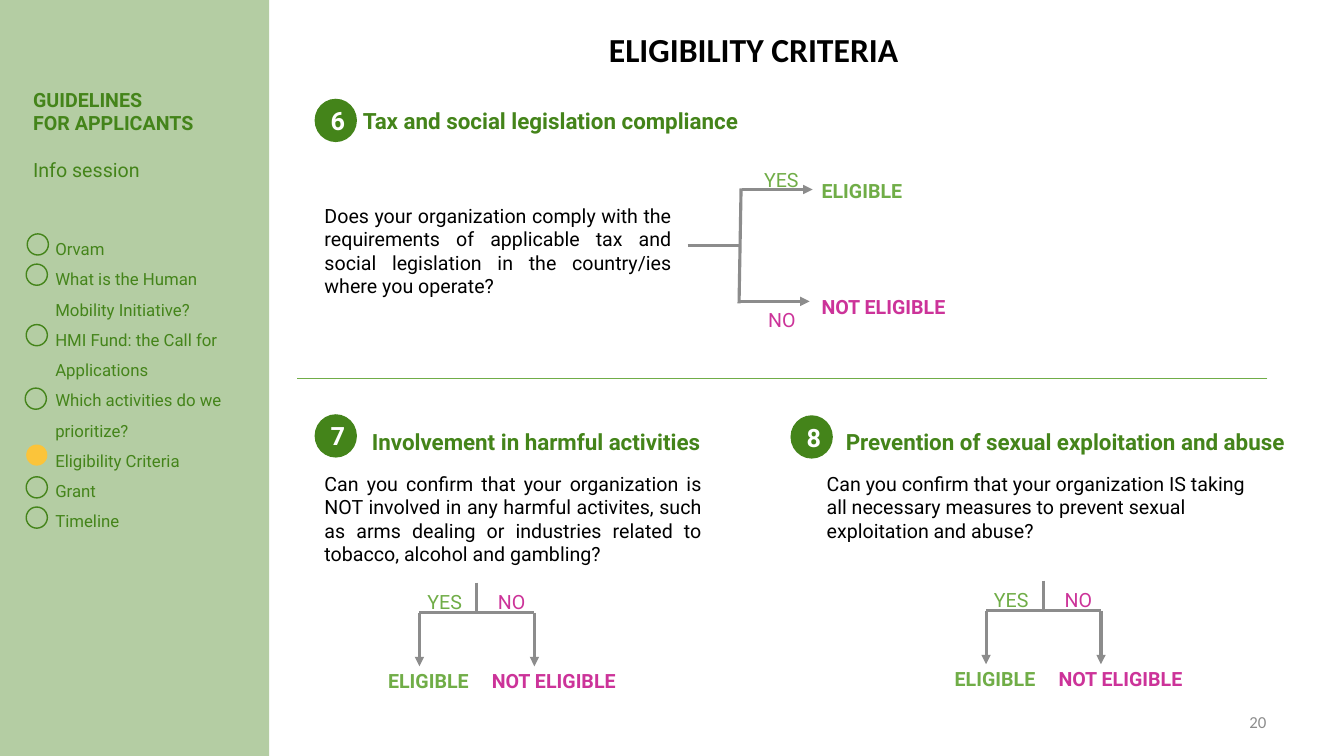
from lxml import etree
from pptx import Presentation
from pptx.dml.color import RGBColor
from pptx.enum.shapes import MSO_CONNECTOR as CONN, MSO_SHAPE as SHAPE
from pptx.enum.text import MSO_ANCHOR as ANCHOR, MSO_AUTO_SIZE as FIT, PP_ALIGN as ALIGN
from pptx.oxml.ns import qn
from pptx.util import Inches, Pt

GREEN, LIME, PINK = "44841A", "70AD47", "CC3399"
GREY, BLACK, WHITE, YELLOW = "8C8C8C", "000000", "FFFFFF", "FBC43A"

# Content
TITLE = "ELIGIBILITY CRITERIA"
PAGE = "20"
GUIDE = ["GUIDELINES\u00a0", "FOR APPLICANTS", "Info session"]
# Agenda: text, marker left, marker top, is current
AGENDA = [
    ("Orvam", 0.27, 2.32, False),
    ("What is the Human Mobility Initiative?", 0.26, 2.62, False),
    ("HMI Fund: the Call for Applications", 0.26, 3.22, False),
    ("Which activities do we prioritize?", 0.25, 3.85, False),
    ("Eligibility Criteria", 0.26, 4.41, True),
    ("Grant", 0.26, 4.73, False),
    ("Timeline", 0.26, 5.03, False),
]
# Criteria: number, badge position, heading, heading box, question, question box, alignment
CRITERIA = [
    ("6", (3.12, 0.98), "Tax and social legislation compliance", (3.5, 1.01, 4.29, 0.37),
     "Does your organization comply with the requirements of applicable tax and "
     "social legislation in the country/ies where you operate?",
     (3.12, 1.97, 3.64, 1.04), ALIGN.JUSTIFY),
    ("7", (3.12, 4.11), "Involvement in harmful activities", (3.59, 4.2, 3.78, 0.37),
     "Can you confirm that your organization is NOT involved in any harmful activites, "
     "such as arms dealing or industries related to tobacco, alcohol and gambling?",
     (3.12, 4.63, 3.94, 1.04), ALIGN.JUSTIFY),
    ("8", (7.84, 4.12), "Prevention of sexual exploitation and abuse", (8.29, 4.2, 4.99, 0.37),
     "Can you confirm that your organization IS taking all necessary measures to "
     "prevent sexual exploitation and abuse?",
     (8.1, 4.63, 4.59, 0.81), ALIGN.LEFT),
]
# Labels: text, width, colour, bold
LABELS = {
    "yes": ("YES", 0.55, LIME, False),
    "no": ("NO", 0.48, PINK, False),
    "pass": ("ELIGIBLE", 1.12, LIME, True),
    "fail": ("NOT ELIGIBLE", 1.61, PINK, True),
}
SIDE_LABELS = [("yes", 7.48, 1.62), ("no", 7.52, 3.01), ("pass", 8.05, 1.73), ("fail", 8.05, 2.88)]
# Side tree lines: start, end, has arrow
SIDE_LINES = [
    ((7.33, 2.99), (8.03, 2.99), True),
    ((7.35, 1.87), (7.33, 3.01), False),
    ((7.36, 1.88), (8.06, 1.88), True),
    ((6.82, 2.44), (7.35, 2.44), False),
]
DOWN_TREES = [(4.16, 6.08), (9.78, 6.06)]  # left end of each crossbar
DOWN_LABELS = [("yes", -0.02, -0.28), ("no", 0.68, -0.28), ("pass", -0.41, 0.51), ("fail", 0.62, 0.51)]


def rgb(value):
    return RGBColor.from_string(value)


def write(sp, lines, size=14, color=BLACK, bold=False, font="Roboto", align=ALIGN.LEFT,
          anchor=ANCHOR.TOP, wrap=True, fit=FIT.SHAPE_TO_FIT_TEXT, spacing=None):
    tf = sp.text_frame
    tf.word_wrap, tf.auto_size, tf.vertical_anchor = wrap, fit, anchor
    for i, line in enumerate([lines] if isinstance(lines, str) else lines):
        p = tf.paragraphs[0] if i == 0 else tf.add_paragraph()
        p.alignment = align
        if spacing:
            p.line_spacing = spacing
        r = p.add_run()
        r.text = line
        f = r.font
        f.size, f.bold, f.name, f.color.rgb = Pt(size), bold, font, rgb(color)
    return tf


def text(box, lines, **fmt):
    return write(s.shapes.add_textbox(*map(Inches, box)), lines, **fmt)


def shape(kind, box, fill=None, outline=None):
    sp = s.shapes.add_shape(kind, *map(Inches, box))
    sp.shadow.inherit = False
    if fill:
        sp.fill.solid()
        sp.fill.fore_color.rgb = rgb(fill)
    else:
        sp.fill.background()
    if outline:
        sp.line.color.rgb = rgb(outline)
        sp.line.width = Pt(1)
    else:
        sp.line.fill.background()
    return sp


def line(start, end, arrow=False, color=GREY, width=2.25):
    c = s.shapes.add_connector(CONN.STRAIGHT, *map(Inches, (*start, *end)))
    c.line.color.rgb = rgb(color)
    c.line.width = Pt(width)
    if arrow:
        etree.SubElement(c.line._get_or_add_ln(), qn("a:tailEnd"), type="triangle")
    etree.SubElement(c._element.spPr, qn("a:effectLst"))


def label(key, x, y):
    words, width, color, bold = LABELS[key]
    text((x, y, width, 0.34), words, color=color, bold=bold, wrap=False)


prs = Presentation()
prs.slide_width, prs.slide_height = Inches(13.33), Inches(7.5)
s = prs.slides.add_slide(prs.slide_layouts[5])

# Title and page number
title = s.shapes.title
title.left, title.top, title.width, title.height = map(Inches, (5.92, 0.24, 3.11, 0.5))
write(title, TITLE, size=24, bold=True, font="Calibri", align=ALIGN.CENTER)
text((11.95, 7.01, 0.71, 0.31), PAGE, size=12, color=GREY, font="Calibri",
     align=ALIGN.RIGHT, anchor=ANCHOR.MIDDLE, fit=FIT.NONE)

# Side panel
panel = shape(SHAPE.RECTANGLE, (0, 0, 2.67, 7.5), fill=GREEN)
panel_color = panel._element.spPr.find(qn("a:solidFill"))[0]
etree.SubElement(panel_color, qn("a:alpha"), val="40000")
guide = text((0.23, 0.82, 1.94, 1.04), GUIDE, color=GREEN, bold=True)
session = guide.paragraphs[-1]
session.space_before = Pt(16.4)
session.runs[0].font.bold = False
text((0.45, 2.22, 2.19, 3.1), [item[0] for item in AGENDA], size=12, color=GREEN, spacing=1.5)
for _, x, y, current in AGENDA:
    shape(SHAPE.OVAL, (x, y, 0.21, 0.21), fill=YELLOW if current else None,
          outline=None if current else GREEN)

# Criteria
line((12.57, 3.75), (2.95, 3.75), color=LIME, width=0.5)
for number, spot, heading, heading_box, question, question_box, align in CRITERIA:
    badge = shape(SHAPE.OVAL, (*spot, 0.42, 0.43), fill=GREEN)
    write(badge, number, size=18, color=WHITE, bold=True, align=ALIGN.CENTER,
          anchor=ANCHOR.MIDDLE, fit=FIT.NONE)
    text(heading_box, heading, size=16, color=GREEN, bold=True, wrap=False)
    text(question_box, question, align=align)

# Side decision tree
for start, end, arrow in SIDE_LINES:
    line(start, end, arrow)
for key, x, y in SIDE_LABELS:
    label(key, x, y)

# Downward decision trees
for x, y in DOWN_TREES:
    line((x + 0.57, y - 0.3), (x + 0.57, y))
    line((x, y), (x + 1.14, y))
    for end_x in (x, x + 1.14):
        line((end_x, y), (end_x, y + 0.53), arrow=True)
    for key, dx, dy in DOWN_LABELS:
        label(key, x + dx, y + dy)

prs.save("out.pptx")
